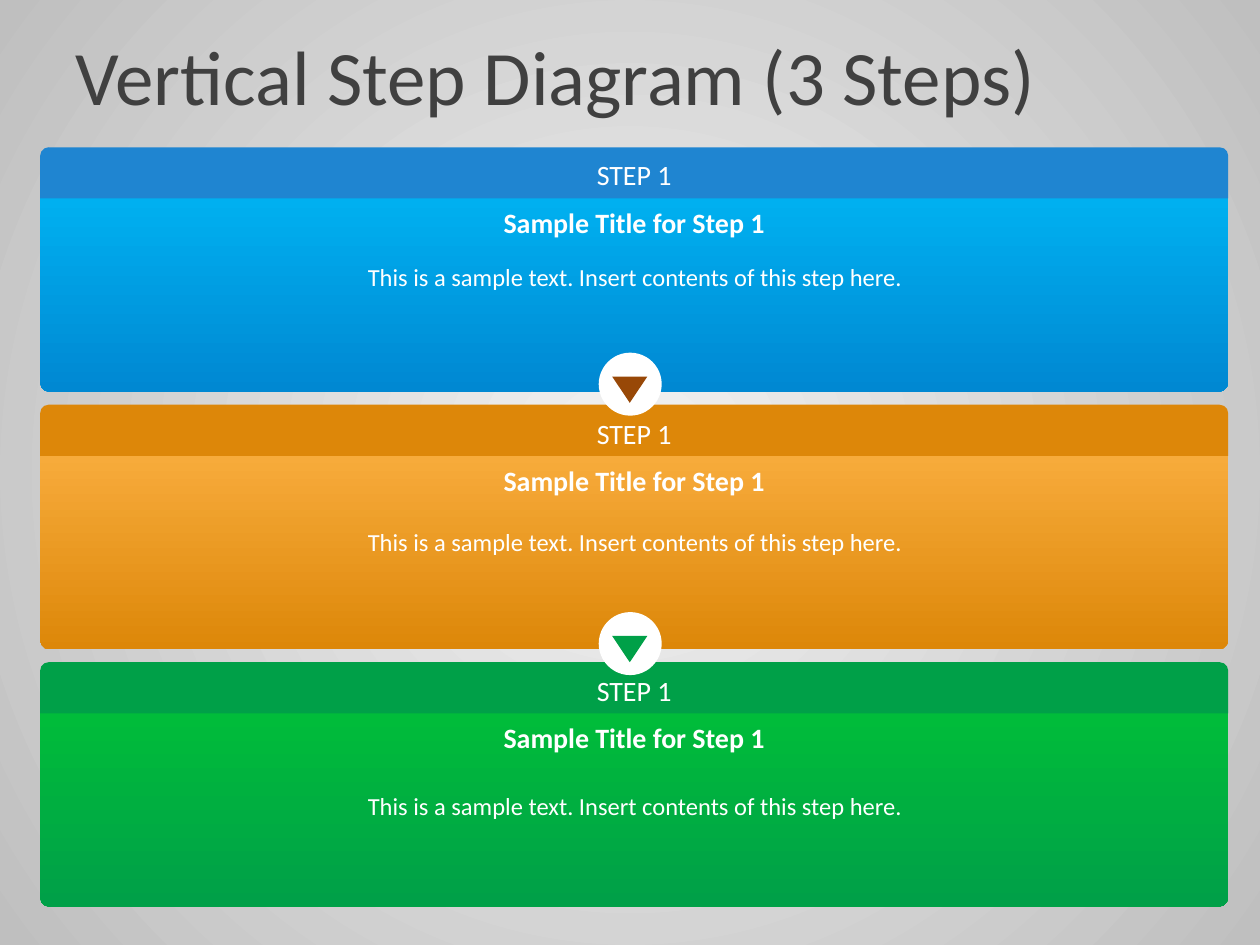
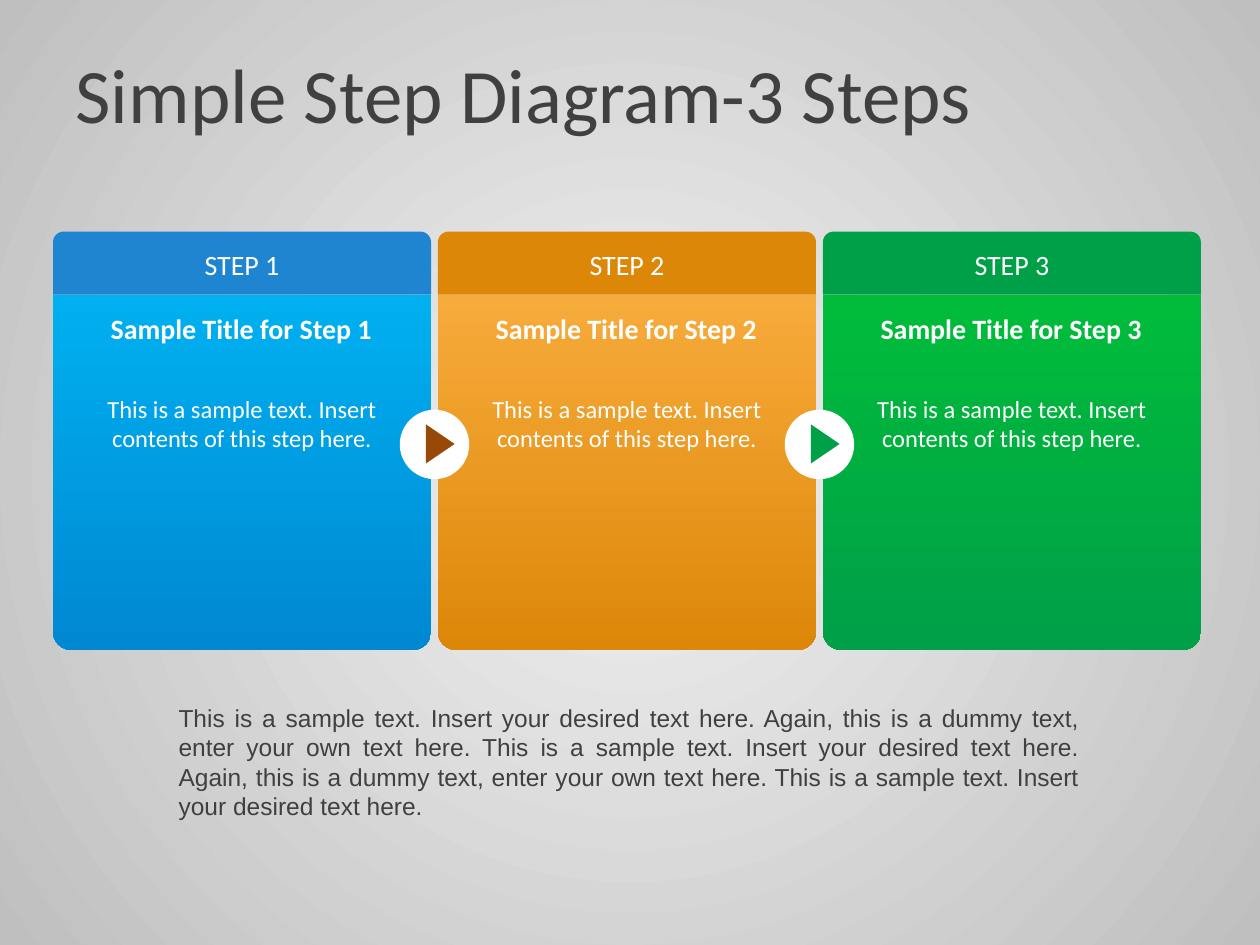
from lxml import etree
from pptx import Presentation
from pptx.dml.color import RGBColor
from pptx.enum.shapes import MSO_SHAPE
from pptx.enum.text import MSO_ANCHOR, MSO_AUTO_SIZE, PP_ALIGN
from pptx.oxml.ns import qn
from pptx.util import Cm, Pt

ROUNDED_TOP = MSO_SHAPE.ROUND_2_SAME_RECTANGLE
OVAL = MSO_SHAPE.OVAL
TRIANGLE = MSO_SHAPE.ISOSCELES_TRIANGLE
TOP, MIDDLE, BOTTOM = MSO_ANCHOR.TOP, MSO_ANCHOR.MIDDLE, MSO_ANCHOR.BOTTOM
LEFT, CENTER, JUSTIFY = PP_ALIGN.LEFT, PP_ALIGN.CENTER, PP_ALIGN.JUSTIFY

WHITE = RGBColor(0xFF, 0xFF, 0xFF)
DARK_GRAY = RGBColor(0x40, 0x40, 0x40)
BACKGROUND_CENTER = RGBColor(0xF2, 0xF2, 0xF2)
BACKGROUND_EDGE = RGBColor(0xBF, 0xBF, 0xBF)
BLUE = RGBColor(0x1F, 0x85, 0xD1)
BLUE_LIGHT = RGBColor(0x00, 0xB0, 0xF0)
BLUE_DEEP = RGBColor(0x00, 0x88, 0xD2)
ORANGE = RGBColor(0xDD, 0x87, 0x09)
ORANGE_LIGHT = RGBColor(0xF7, 0xAB, 0x3B)
GREEN = RGBColor(0x00, 0xA0, 0x48)
GREEN_LIGHT = RGBColor(0x00, 0xBC, 0x3A)
BROWN = RGBColor(0x98, 0x48, 0x07)

# Header colour, then the top and bottom colours of the panel
STEP_COLORS = [
    (BLUE, BLUE_LIGHT, BLUE_DEEP),
    (ORANGE, ORANGE_LIGHT, ORANGE),
    (GREEN, GREEN_LIGHT, GREEN),
]
ARROW_COLORS = [BROWN, GREEN]
STEP_TEXT = "This is a sample text. Insert contents of this step here."
SUMMARY = (
    "This is a sample text. Insert your desired text here. "
    "Again, this is a dummy text, enter your own text here. "
    "This is a sample text. Insert your desired text here. "
    "Again, this is a dummy text, enter your own text here. "
    "This is a sample text. Insert your desired text here."
)

# Each part: left, top, width, height of the first one, then its step
# to the right and down, all in centimetres
DIAGRAMS = [
    {
        "title": "Vertical Step Diagram (3 Steps)",
        "title_top": 0.2,
        "numbers": [1, 1, 1],
        "header_anchors": [MIDDLE, BOTTOM, BOTTOM],
        "panel": (0.81, 3.99, 23.95, 3.91, 0, 5.19),
        "heading": (1.8, 4.01, 21.97, 1.32, 0, 5.2),
        "body": (3.23, 5.16, 19.15, 1.67, 0, 5.33),
        "header": (0.81, 2.97, 23.95, 1.03, 0, 5.19),
        "circle": (12.07, 7.11, 1.27, 1.27, 0, 5.23),
        "arrow": (12.34, 7.59, 0.71, 0.53, 0, 5.23),
        "arrow_rotation": 180,
    },
    {
        "title": "Simple Step Diagram-3 Steps",
        "title_top": 0.56,
        "numbers": [1, 2, 3],
        "header_anchors": [MIDDLE, MIDDLE, MIDDLE],
        "panel": (1.07, 5.94, 7.62, 7.16, 7.76, 0),
        "heading": (1.37, 6.15, 6.99, 1.63, 7.76, 0),
        "body": (1.83, 7.82, 6.1, 2.06, 7.76, 0),
        "header": (1.07, 4.67, 7.62, 1.27, 7.76, 0),
        "circle": (8.06, 8.26, 1.4, 1.4, 7.76, 0),
        "arrow": (8.48, 8.66, 0.79, 0.58, 7.76, 0),
        "arrow_rotation": 90,
    },
]


def add_part(parent, place, index=0, geometry=None, color=None):
    """Add the index-th shape of a row or column, or a text box without geometry."""
    left, top, width, height, step_right, step_down = place
    box = (Cm(left + index * step_right), Cm(top + index * step_down),
           Cm(width), Cm(height))
    if geometry is None:
        return parent.shapes.add_textbox(*box)
    shape = parent.shapes.add_shape(geometry, *box)
    shape.shadow.inherit = False
    shape.line.fill.background()
    if color is not None:
        shape.fill.solid()
        shape.fill.fore_color.rgb = color
    return shape


def write(shape, text, size=16, color=WHITE, bold=False, font="Calibri",
          align=CENTER, anchor=TOP):
    frame = shape.text_frame
    frame.word_wrap = True
    frame.auto_size = MSO_AUTO_SIZE.NONE
    frame.vertical_anchor = anchor
    paragraph = frame.paragraphs[0]
    paragraph.alignment = align
    run = paragraph.add_run()
    run.text = text
    run.font.size = Pt(size)
    run.font.name = font
    run.font.bold = bold
    run.font.color.rgb = color


presentation = Presentation()
presentation.slide_width = Cm(25.4)
presentation.slide_height = Cm(19.05)

# Radial background shared by all slides
master = presentation.slide_master
background_fill = master.background.fill
background_fill.gradient()
for stop, color in zip(background_fill.gradient_stops,
                       (BACKGROUND_CENTER, BACKGROUND_EDGE)):
    stop.color.rgb = color
linear = master.element.find(".//" + qn("p:bgPr")).find(".//" + qn("a:lin"))
radial = etree.SubElement(linear.getparent(), qn("a:path"), path="circle")
etree.SubElement(radial, qn("a:fillToRect"),
                 l="50000", t="50000", r="50000", b="50000")
linear.getparent().remove(linear)

for diagram in DIAGRAMS:
    slide = presentation.slides.add_slide(presentation.slide_layouts[5])
    title = slide.shapes.title
    title.left, title.top = Cm(1.27), Cm(diagram["title_top"])
    title.width, title.height = Cm(22.86), Cm(2.62)
    write(title, diagram["title"], size=44, color=DARK_GRAY, align=LEFT,
          anchor=MIDDLE)

    for index, (header_color, *panel_colors) in enumerate(STEP_COLORS):
        number = diagram["numbers"][index]
        step = slide.shapes.add_group_shape()

        panel = add_part(step, diagram["panel"], index, ROUNDED_TOP)
        panel.adjustments[0] = 0
        panel.adjustments[1] = 0.05
        panel.fill.gradient()
        panel.fill.gradient_angle = 270
        for stop, color in zip(panel.fill.gradient_stops, panel_colors):
            stop.color.rgb = color

        heading = add_part(step, diagram["heading"], index)
        write(heading, f"Sample Title for Step {number}", bold=True)
        body = add_part(step, diagram["body"], index)
        write(body, STEP_TEXT, size=14)
        header = add_part(step, diagram["header"], index, ROUNDED_TOP, header_color)
        write(header, f"STEP {number}", anchor=diagram["header_anchors"][index])

    for index, arrow_color in enumerate(ARROW_COLORS):
        marker = slide.shapes.add_group_shape()
        add_part(marker, diagram["circle"], index, OVAL, WHITE)
        arrow = add_part(marker, diagram["arrow"], index, TRIANGLE, arrow_color)
        arrow.rotation = diagram["arrow_rotation"]

# The last slide closes with a summary below the steps
summary = add_part(slide, (3.35, 14.17, 18.67, 3.76, 0, 0))
summary.text_frame.margin_top = summary.text_frame.margin_bottom = 0
write(summary, SUMMARY, size=14, color=DARK_GRAY, font="Arial", align=JUSTIFY)

presentation.save("out.pptx")
